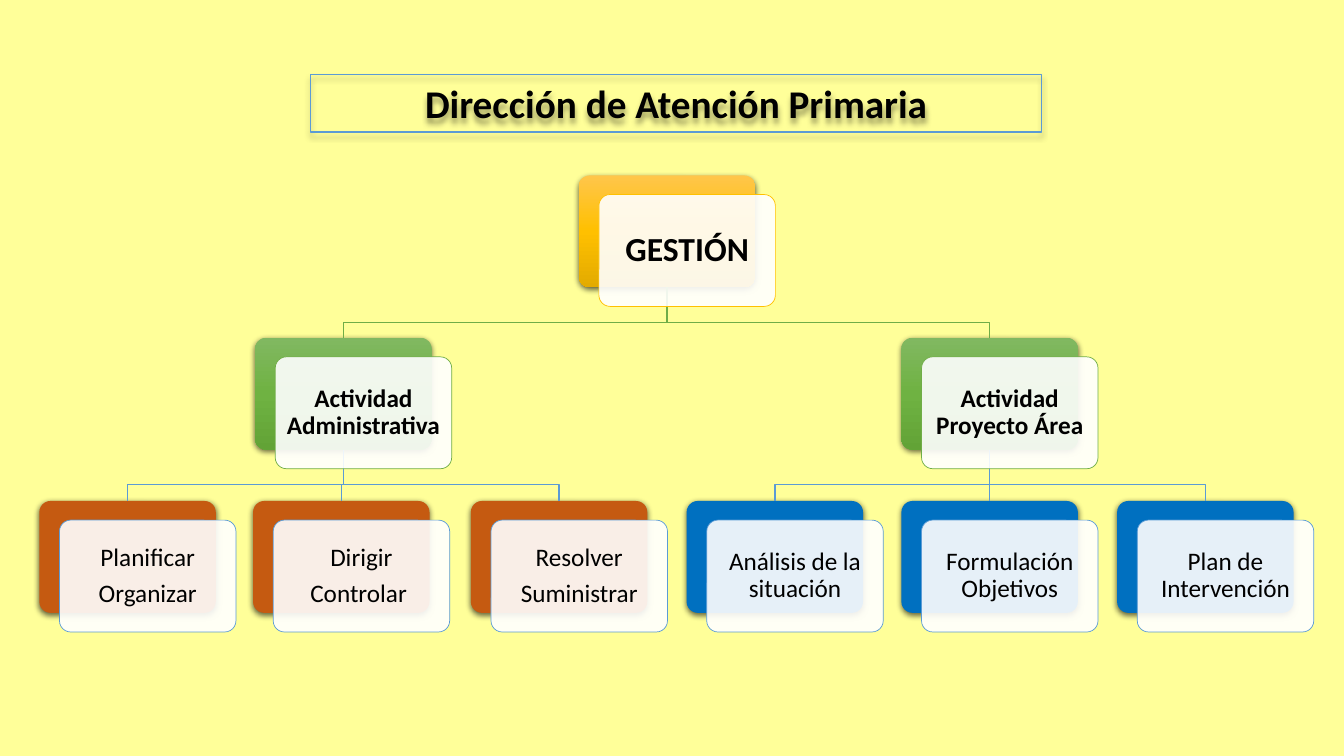
from dataclasses import dataclass

from pptx import Presentation
from pptx.dml.color import RGBColor
from pptx.enum.shapes import MSO_CONNECTOR, MSO_SHAPE
from pptx.enum.text import MSO_ANCHOR, PP_ALIGN
from pptx.oxml import parse_xml
from pptx.oxml.ns import nsdecls, qn
from pptx.shapes.autoshape import Shape
from pptx.shapes.shapetree import SlideShapes
from pptx.util import Pt

SCALE = 9144
FONT = "Calibri"
BLUE, GREEN, GOLD = "5B9BD5", "70AD47", "FFC000"
RUST, NAVY = "C55A11", "0070C0"
LEAF = ("81B861", "6FB242", "62A336")
AMBER = ("FFC64B", "FFC000", "E3AB00")
WIDE, HIGH = 175, 111
SHIFT_X, SHIFT_Y = 20, 19
DROP = 35
INSET = 7


@dataclass(frozen=True)
class Card:
    name: str
    left: int
    top: int
    fill: tuple[str, ...]
    edge: str
    lines: tuple[str, ...]
    boss: str = ""
    size: int = 18
    bold: bool = False


@dataclass(frozen=True)
class Shade:
    alpha: int
    blur: float
    dist: float


CARDS = (
    Card("top", 574, 174, AMBER, GOLD, ("GESTIÓN",), size=24, bold=True),
    Card("admin", 253, 335, LEAF, GREEN, ("Actividad Administrativa",), "top", bold=True),
    Card("area", 894, 335, LEAF, GREEN, ("Actividad Proyecto Área",), "top", bold=True),
    Card("plan", 39, 497, (RUST,), BLUE, ("Planificar", "Organizar"), "admin"),
    Card("lead", 251, 497, (RUST,), BLUE, ("Dirigir", "Controlar "), "admin"),
    Card("solve", 467, 497, (RUST,), BLUE, ("Resolver", "Suministrar"), "admin"),
    Card("study", 681, 497, (NAVY,), BLUE, ("Análisis de la situación",), "area"),
    Card("goals", 894, 497, (NAVY,), BLUE, ("Formulación Objetivos",), "area"),
    Card("act", 1108, 497, (NAVY,), BLUE, ("Plan de Intervención",), "area"),
)
CARD_SHADE = Shade(63, 4.5, 1.5)
TITLE_SHADE = Shade(40, 4, 3)


def px(value: int) -> int:
    return value * SCALE


def color(code: str) -> RGBColor:
    return RGBColor.from_string(code)


def add_box(shapes: SlideShapes, kind: MSO_SHAPE, left: int, top: int,
            width: int, height: int) -> Shape:
    box = shapes.add_shape(kind, px(left), px(top), px(width), px(height))
    box.shadow.inherit = False
    if kind == MSO_SHAPE.ROUNDED_RECTANGLE:
        box.adjustments[0] = 0.1
    return box


def set_line(item, code: str, width: float) -> None:
    item.line.color.rgb = color(code)
    item.line.width = Pt(width)


def set_shade(box: Shape, shade: Shade) -> None:
    box._element.spPr.find(qn("a:effectLst")).append(parse_xml(
        f'<a:outerShdw {nsdecls("a")} blurRad="{Pt(shade.blur)}" '
        f'dist="{Pt(shade.dist)}" dir="5400000" algn="ctr" rotWithShape="0">'
        f'<a:srgbClr val="000000"><a:alpha val="{shade.alpha * 1000}"/>'
        '</a:srgbClr></a:outerShdw>'))


def set_fill(box: Shape, codes: tuple[str, ...]) -> None:
    if len(codes) == 1:
        box.fill.solid()
        box.fill.fore_color.rgb = color(codes[0])
        return
    box.fill.gradient()
    props = box._element.spPr
    stops = "".join(
        f'<a:gs pos="{i * 100000 // (len(codes) - 1)}"><a:srgbClr val="{code}"/></a:gs>'
        for i, code in enumerate(codes))
    props.replace(props.find(qn("a:gradFill")), parse_xml(
        f'<a:gradFill {nsdecls("a")} rotWithShape="1"><a:gsLst>{stops}</a:gsLst>'
        '<a:lin ang="5400000" scaled="0"/></a:gradFill>'))


def set_text(box: Shape, lines: tuple[str, ...], size: int, bold: bool,
             space: float = 1, after: float = 0) -> None:
    frame = box.text_frame
    frame.word_wrap = True
    frame.vertical_anchor = MSO_ANCHOR.MIDDLE
    frame.text = "\n".join(lines)
    for para in frame.paragraphs:
        para.alignment = PP_ALIGN.CENTER
        para.line_spacing = space
        para.space_after = Pt(after)
        para.font.name = FONT
        para.font.size = Pt(size)
        para.font.bold = bold
        para.font.color.rgb = color("000000")


def add_title(shapes: SlideShapes) -> None:
    box = add_box(shapes, MSO_SHAPE.RECTANGLE, 308, 74, 725, 57)
    box.fill.background()
    set_line(box, BLUE, 0.75)
    set_shade(box, TITLE_SHADE)
    set_text(box, ("Dirección de Atención Primaria",), 28, True)


def add_back(shapes: SlideShapes, card: Card) -> Shape:
    box = add_box(shapes, MSO_SHAPE.ROUNDED_RECTANGLE, card.left, card.top, WIDE, HIGH)
    set_fill(box, card.fill)
    box.line.fill.background()
    set_shade(box, CARD_SHADE)
    return box


def add_front(shapes: SlideShapes, card: Card) -> None:
    box = add_box(shapes, MSO_SHAPE.ROUNDED_RECTANGLE, card.left + SHIFT_X,
                  card.top + SHIFT_Y, WIDE, HIGH)
    set_fill(box, ("FFFFFF",))
    tint = box._element.spPr.find(qn("a:solidFill"))[0]
    tint.append(parse_xml(f'<a:alpha {nsdecls("a")} val="90000"/>'))
    set_line(box, card.edge, 0.5)
    frame = box.text_frame
    frame.margin_left = frame.margin_right = px(INSET)
    frame.margin_top = frame.margin_bottom = px(INSET)
    set_text(box, card.lines, card.size, card.bold, 0.9, card.size * 0.35)


def add_link(shapes: SlideShapes, boss: Shape, child: Shape, code: str) -> None:
    from_x, from_y = boss.left + boss.width // 2, boss.top + boss.height
    to_x, to_y = child.left + child.width // 2, child.top
    if from_x == to_x:
        link = shapes.add_connector(MSO_CONNECTOR.STRAIGHT, from_x, from_y, to_x, to_y)
        link.begin_connect(boss, 2)
        link.end_connect(child, 0)
        link._element.spPr.append(parse_xml(f'<a:effectLst {nsdecls("a")}/>'))
    else:
        bend = from_y + px(DROP)
        pen = shapes.build_freeform(from_x, from_y)
        pen.add_line_segments(((from_x, bend), (to_x, bend), (to_x, to_y)), close=False)
        link = pen.convert_to_shape()
        link.fill.background()
        link.shadow.inherit = False
    set_line(link, code, 1)


def main() -> None:
    deck = Presentation()
    deck.slide_width, deck.slide_height = px(1333), px(750)
    slide = deck.slides.add_slide(deck.slide_layouts[6])
    slide.background.fill.solid()
    slide.background.fill.fore_color.rgb = color("FFFF99")
    shapes = slide.shapes
    add_title(shapes)
    backs = {card.name: add_back(shapes, card) for card in CARDS}
    for card in CARDS:
        if card.boss:
            add_link(shapes, backs[card.boss], backs[card.name], card.edge)
    for card in CARDS:
        add_front(shapes, card)
    deck.save("out.pptx")


if __name__ == "__main__":
    main()
